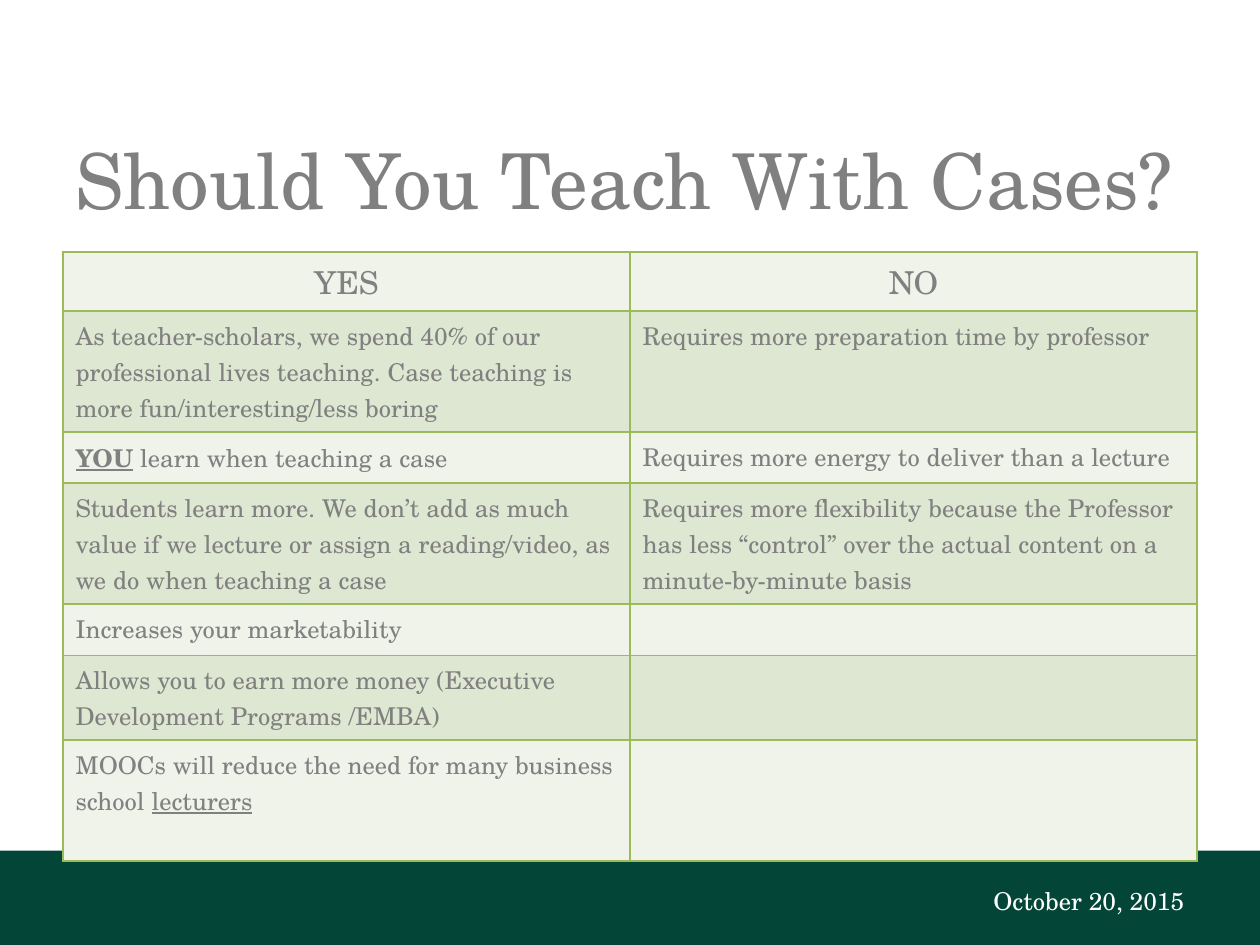
import pptx
import pptx.util
import pptx.dml.color
import pptx.enum.shapes
import pptx.enum.text
import pptx.oxml
import pptx.oxml.ns
from lxml import etree

Cm = pptx.util.Cm
Pt = pptx.util.Pt
ALIGN = pptx.enum.text.PP_ALIGN
MIDDLE = pptx.enum.text.MSO_ANCHOR.MIDDLE

COLORS = {
    "text": "808080",
    "white": "FFFFFF",
    "footer": "034638",
    "border": "9BBB59",
    "light": "EFF3EA",
    "dark": "DEE7D1",
}


def rgb(name):
    return pptx.dml.color.RGBColor.from_string(COLORS[name])


class SlideBuilder:
    font = "TeX Gyre Schola"

    def __init__(self, slide):
        self.slide = slide

    def fill_paragraph(self, p, runs, size, color="text", align=ALIGN.LEFT):
        """Fill a paragraph from (text, styles) pairs; styles holds b and/or u."""
        p.alignment = align
        p.font.name = self.font
        p.font.size = Pt(size)
        p.font.color.rgb = rgb(color)
        for text, styles in runs:
            r = p.add_run()
            r.text = text
            if "b" in styles:
                r.font.bold = True
            if "u" in styles:
                r.font.underline = True

    def bar(self, x, y, w, h, color):
        rect = pptx.enum.shapes.MSO_SHAPE.RECTANGLE
        sp = self.slide.shapes.add_shape(rect, Cm(x), Cm(y), Cm(w), Cm(h))
        sp.shadow.inherit = False
        sp.fill.solid()
        sp.fill.fore_color.rgb = rgb(color)
        sp.line.fill.background()

    def text(self, x, y, w, h, text, size, color, align=ALIGN.LEFT):
        tf = self.slide.shapes.add_textbox(Cm(x), Cm(y), Cm(w), Cm(h)).text_frame
        tf.word_wrap = True
        tf.vertical_anchor = MIDDLE
        self.fill_paragraph(tf.paragraphs[0], [(text, "")], size, color, align)

    def borders(self, cell):
        tcPr = cell._tc.get_or_add_tcPr()
        qn = pptx.oxml.ns.qn
        for side in ("a:lnL", "a:lnR", "a:lnT", "a:lnB"):
            ln = etree.SubElement(tcPr, qn(side), w=str(int(Pt(1))))
            fill = etree.SubElement(ln, qn("a:solidFill"))
            etree.SubElement(fill, qn("a:srgbClr"), val=COLORS["border"])

    def table(self, x, y, w, heights, rows):
        cols = len(rows[0])
        table = self.slide.shapes.add_table(
            len(rows), cols, Cm(x), Cm(y), Cm(w), Cm(sum(heights))).table
        for col in table.columns:
            col.width = Cm(w / cols)
        for i, (height, row) in enumerate(zip(heights, rows)):
            table.rows[i].height = Cm(height)
            size, align = (14, ALIGN.LEFT) if i else (18, ALIGN.CENTER)
            for j, runs in enumerate(row):
                cell = table.cell(i, j)
                self.borders(cell)
                cell.fill.solid()
                cell.fill.fore_color.rgb = rgb("dark" if i % 2 else "light")
                p = cell.text_frame.paragraphs[0]
                self.fill_paragraph(p, runs, size, align=align)
                if not runs:  # keeps an empty cell as low as its row
                    etree.SubElement(p._p, pptx.oxml.ns.qn("a:endParaRPr"),
                                     sz=str(size * 100))


ROWS = [
    ([("YES", "")], [("NO", "")]),
    ([("As teacher-scholars, we spend 40% of our professional lives teaching. "
       "Case teaching is more fun/interesting/less boring", "")],
     [("Requires more preparation time by professor", "")]),
    ([("YOU", "bu"), (" learn when teaching a case", "")],
     [("Requires more energy to deliver than a lecture", "")]),
    ([("Students learn more. We don’t add as much value if we lecture or "
       "assign a reading/video, as we do when teaching a case", "")],
     [("Requires more flexibility because the Professor has less “control” "
       "over the actual content on a minute-by-minute basis", "")]),
    ([("Increases your marketability", "")], []),
    ([("Allows you to earn more money (Executive Development Programs /EMBA)",
       "")], []),
    ([("MOOCs will reduce the need for many business school ", ""),
      ("lecturers", "u")], []),
]
HEIGHTS = [1.19, 2.44, 1.03, 2.44, 1.03, 1.71, 2.44]


def main():
    prs = pptx.Presentation()
    prs.slide_width, prs.slide_height = Cm(25.4), Cm(19.05)
    s = SlideBuilder(prs.slides.add_slide(prs.slide_layouts[6]))

    # Footer band
    s.bar(0, 17.15, 25.4, 1.9, "footer")
    # Title
    s.text(1.27, 2.54, 22.86, 2.13, "Should You Teach With Cases?", 44, "text")
    # Arguments for and against
    s.table(1.27, 5.08, 22.86, HEIGHTS, ROWS)
    # Date
    s.text(18.21, 17.65, 5.92, 1.02, "October 20, 2015", 14, "white", ALIGN.RIGHT)

    prs.save("out.pptx")


if __name__ == "__main__":
    main()
